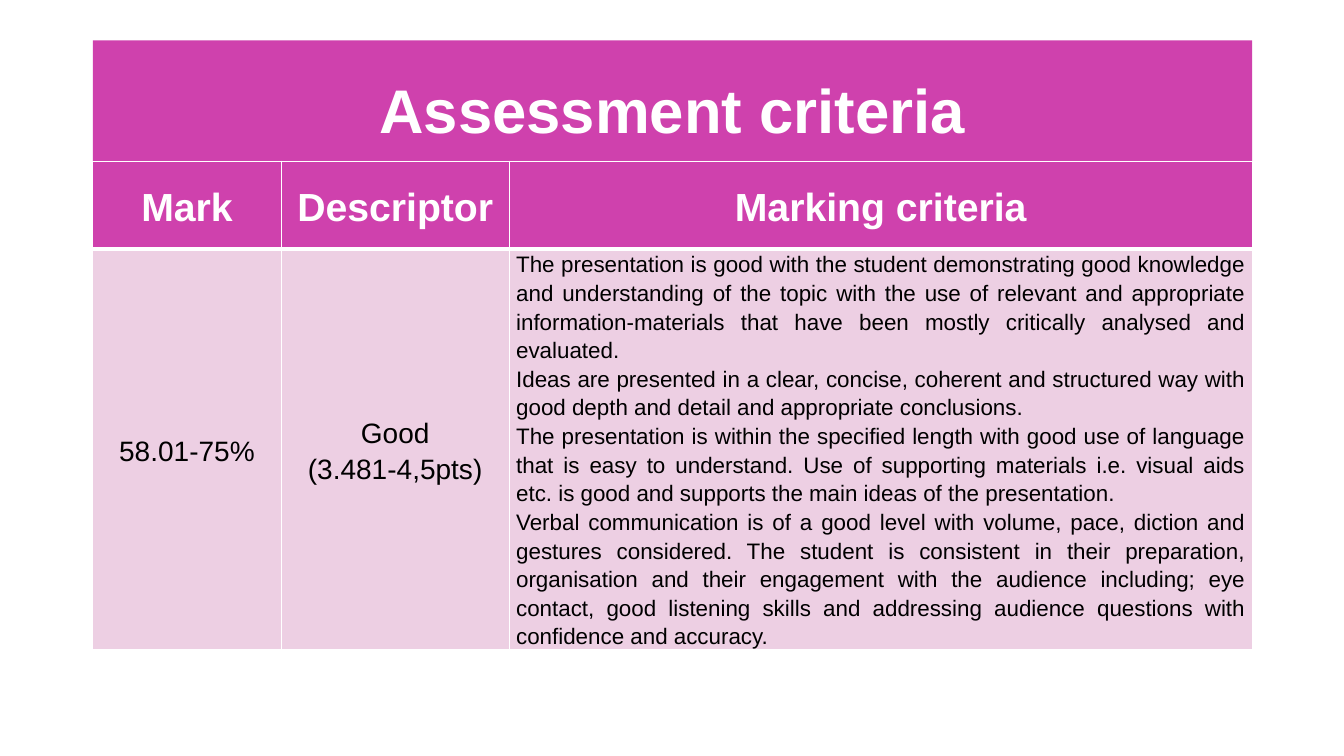
from dataclasses import dataclass

import pptx
import pptx.dml.color
import pptx.enum.text
import pptx.oxml
import pptx.oxml.ns
import pptx.util

Inches = pptx.util.Inches
Pt = pptx.util.Pt
ALIGN = pptx.enum.text.PP_ALIGN
MIDDLE = pptx.enum.text.MSO_ANCHOR.MIDDLE

MAGENTA, PINK, WHITE, BLACK = "CF41AD", "EDCFE3", "FFFFFF", "000000"
LEFT, WIDTH = 0.92, 11.5
COLUMNS = (1.87, 2.26, 7.37)
ROWS = (0.87, 3.87)


@dataclass
class Style:
    size: float
    color: str
    bold: bool
    spacing: float = 1.15
    align: ALIGN = ALIGN.CENTER


@dataclass
class Entry:
    lines: list[str]
    style: Style
    fill: str
    borders: dict[str, float]


TITLE = Style(44, WHITE, True, 0.9)
HEADER = Style(28, WHITE, True)
BODY = Style(20, BLACK, False)
CRITERIA = Style(16, BLACK, False, align=ALIGN.JUSTIFY)
HEADER_BORDERS = {"lnL": 1, "lnR": 1, "lnT": 1, "lnB": 3}
BODY_BORDERS = {"lnL": 1, "lnR": 1, "lnT": 3, "lnB": 1}

HEADINGS = ["Mark", "Descriptor", "Marking criteria"]
DETAILS = [
    (["58.01-75%"], BODY),
    (["Good", "(3.481-4,5pts)"], BODY),
    ([
        "The presentation is good with the student demonstrating good knowledge and "
        "understanding of the topic with the use of relevant and appropriate "
        "information-materials that have been mostly critically analysed and evaluated. ",
        "Ideas are presented in a clear, concise, coherent and structured way with good "
        "depth and detail and appropriate conclusions. ",
        "The presentation is within the specified length with good use of language that "
        "is easy to understand. Use of supporting materials i.e. visual aids etc. is good "
        "and supports the main ideas of the presentation.",
        "Verbal communication is of a good level with volume, pace, diction and gestures "
        "considered. The student is consistent in their preparation, organisation and "
        "their engagement with the audience including; eye contact, good listening skills "
        "and addressing audience questions with confidence and accuracy.",
    ], CRITERIA),
]
GRID = [
    [Entry([text], HEADER, MAGENTA, HEADER_BORDERS) for text in HEADINGS],
    [Entry(lines, style, PINK, BODY_BORDERS) for lines, style in DETAILS],
]


def rgb(value: str) -> pptx.dml.color.RGBColor:
    return pptx.dml.color.RGBColor.from_string(value)


def set_all(target: object, values: dict[str, object]) -> None:
    for name, value in values.items():
        setattr(target, name, value)


def fill_solid(target: object, color: str) -> None:
    target.fill.solid()
    target.fill.fore_color.rgb = rgb(color)


def write(tf: pptx.text.text.TextFrame, lines: list[str], style: Style) -> None:
    tf.text = "\n".join(lines)
    for p in tf.paragraphs:
        set_all(p, {"alignment": style.align, "line_spacing": style.spacing,
                    "space_before": Pt(0), "space_after": Pt(0)})
        for r in p.runs:
            set_all(r.font, {"name": "Arial", "size": Pt(style.size), "bold": style.bold})
            r.font.color.rgb = rgb(style.color)


def draw_cell(cell: pptx.table._Cell, entry: Entry) -> None:
    write(cell.text_frame, entry.lines, entry.style)
    set_all(cell, {"vertical_anchor": MIDDLE, "margin_left": Inches(0.07),
                   "margin_right": Inches(0.07), "margin_top": 0, "margin_bottom": 0})
    tcPr = cell._tc.get_or_add_tcPr()
    for tag, width in entry.borders.items():
        tcPr.append(pptx.oxml.parse_xml(
            f'<a:{tag} {pptx.oxml.ns.nsdecls("a")} w="{Pt(width)}">'
            f'<a:solidFill><a:srgbClr val="{WHITE}"/></a:solidFill></a:{tag}>'))
    fill_solid(cell, entry.fill)


def draw_title(slide: pptx.slide.Slide) -> None:
    sp = slide.shapes.title
    set_all(sp, {"left": Inches(LEFT), "top": Inches(0.4),
                 "width": Inches(WIDTH), "height": Inches(1.45)})
    fill_solid(sp, MAGENTA)
    write(sp.text_frame, ["Assessment criteria"], TITLE)
    set_all(sp.text_frame, {"vertical_anchor": MIDDLE, "word_wrap": True})


def draw_table(slide: pptx.slide.Slide) -> None:
    table = slide.shapes.add_table(
        len(ROWS), len(COLUMNS), Inches(LEFT), Inches(1.6),
        Inches(WIDTH), Inches(sum(ROWS))).table
    for column, width in zip(table.columns, COLUMNS):
        column.width = Inches(width)
    for row, height, entries in zip(table.rows, ROWS, GRID):
        row.height = Inches(height)
        for cell, entry in zip(row.cells, entries):
            draw_cell(cell, entry)


def main() -> None:
    prs = pptx.Presentation()
    set_all(prs, {"slide_width": Inches(13.33), "slide_height": Inches(7.5)})
    slide = prs.slides.add_slide(prs.slide_layouts[5])
    draw_title(slide)
    draw_table(slide)
    prs.save("out.pptx")


if __name__ == "__main__":
    main()
